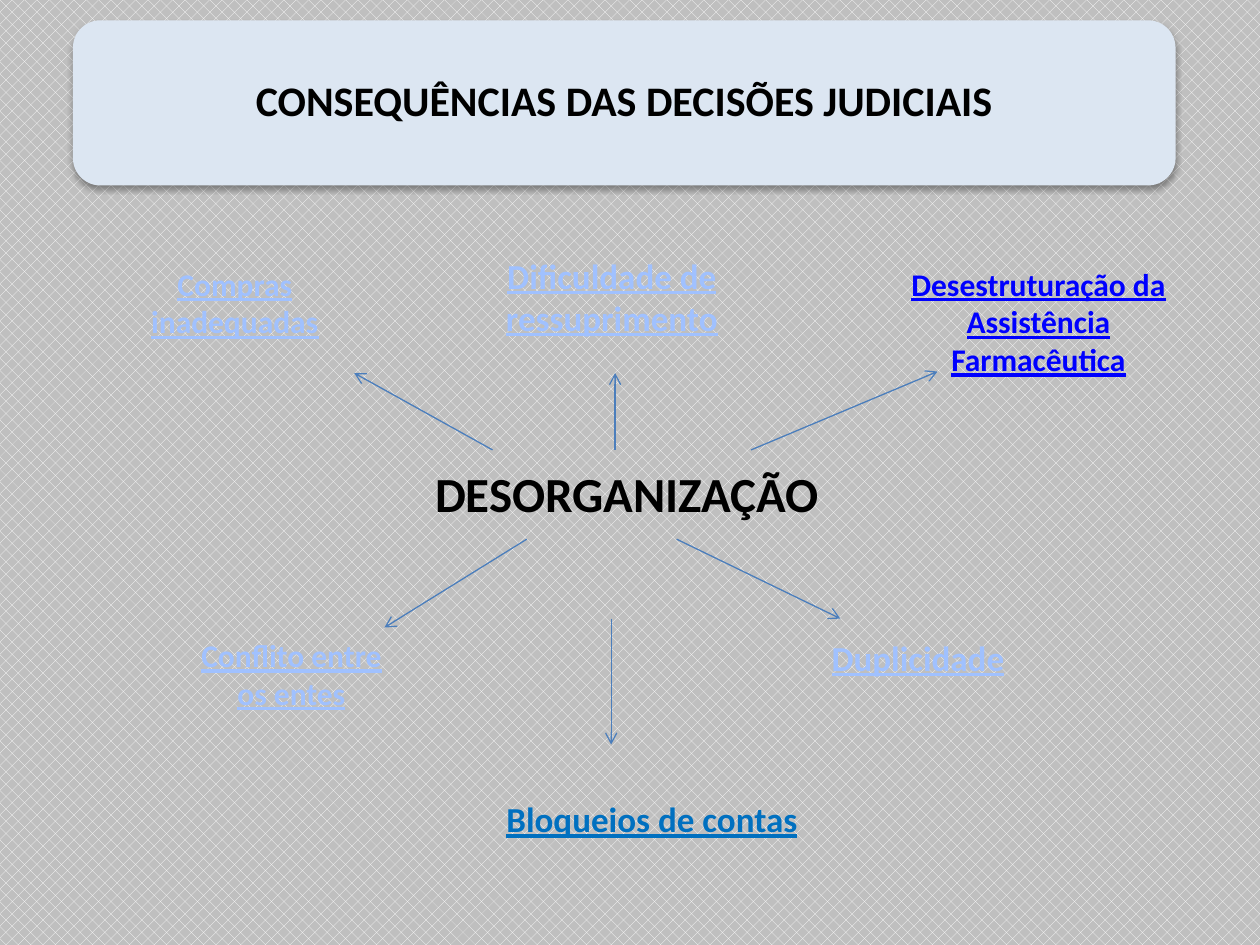
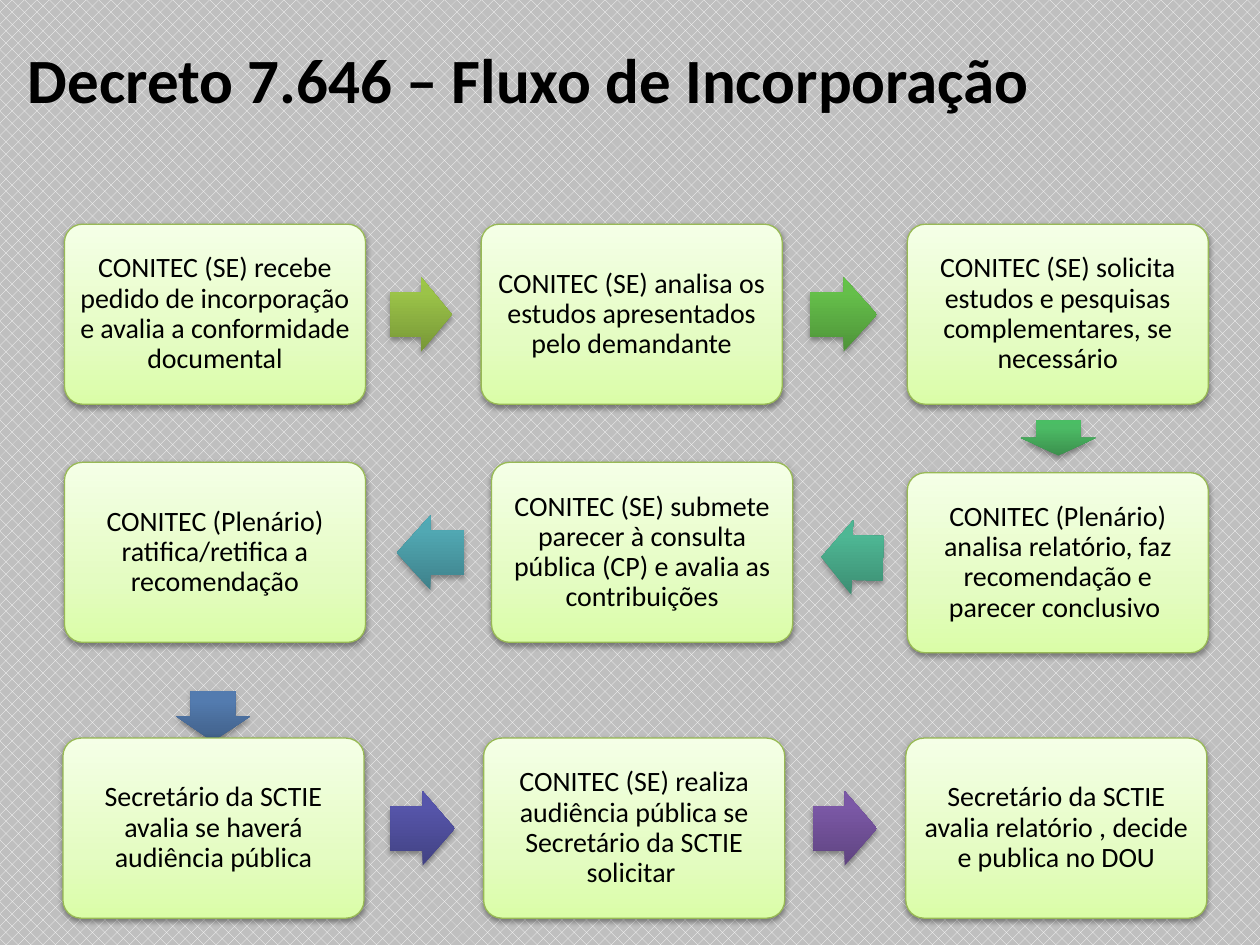
from dataclasses import dataclass

from lxml import etree
from pptx import Presentation
from pptx import util as u
from pptx.dml.color import RGBColor
from pptx.enum import dml, shapes, text
from pptx.oxml.ns import qn


@dataclass(frozen=True)
class Theme:
    font: str = "Calibri"
    ink: str = "000000"
    backdrop: str = "BFBFBF"
    hatch: str = "FFFFFF"
    banner: str = "DCE6F2"
    arrow: str = "4B7EBC"
    card_line: str = "98B955"
    strong_blue: str = "0000FF"
    account_blue: str = "0070C0"
    label_outline: tuple = ("467AB8", 0.83, 100)
    glow_outline: tuple = ("1E7CEE", 0.07, 55)
    card_stops: tuple = ((0, "DAFDA7"), (35, "E4FCC2"), (100, "F5FFE7"))
    label_stops: tuple = ((0, "BFD3F9"), (9, "A0C1FF"), (50, "003D85"),
                          (79, "A0C1FF"), (100, "BFD3F9"))
    heading: int = 36
    hub: int = 28
    banner_size: int = 24
    label_large: int = 20
    label_small: int = 18
    card: int = 16


THEME = Theme()
CARD_WIDTH, CARD_HEIGHT = 6.07, 3.63
ARROW_HEIGHT = 1.5


# XML helpers
def add_node(parent, tag, **attributes):
    node = etree.SubElement(parent, qn(tag))
    for name, value in attributes.items():
        node.set(name, str(value))
    return node


def add_colour(parent, colour, alpha=100):
    node = add_node(parent, "a:srgbClr", val=colour)
    if alpha < 100:
        add_node(node, "a:alpha", val=alpha * 1000)


def set_gradient(fill, owner, stops, angle):
    fill.gradient()
    fill.gradient_angle = angle
    gradient = owner.find(qn("a:gradFill"))
    gradient.set("rotWithShape", "0")
    stop_list = gradient.find(qn("a:gsLst"))
    for stop in list(stop_list):
        stop_list.remove(stop)
    for position, colour in stops:
        add_colour(add_node(stop_list, "a:gs", pos=position * 1000), colour)


def set_outline(span, colour, width, alpha):
    properties = span.font._element
    line = add_node(properties, "a:ln", w=u.Pt(width))
    add_colour(add_node(line, "a:solidFill"), colour, alpha)
    properties.insert(0, line)


def set_shadow(shape, alpha=35, distance=1.8):
    shape.shadow.inherit = False
    effects = shape._element.spPr.find(qn("a:effectLst"))
    shadow = add_node(effects, "a:outerShdw", blurRad=u.Pt(3.1),
                      dist=u.Pt(distance), dir=90 * 60000, rotWithShape=0)
    add_colour(shadow, "000000", alpha)


# Elements
def add_page(deck):
    page = deck.slides.add_slide(deck.slide_layouts[6])
    fill = page.background.fill
    fill.patterned()
    fill.pattern = dml.MSO_PATTERN.PERCENT_30
    fill.fore_color.rgb = RGBColor.from_string(THEME.hatch)
    fill.back_color.rgb = RGBColor.from_string(THEME.backdrop)
    return page


def write(box, words, size, bold=False, colour=THEME.ink,
          align=text.PP_ALIGN.CENTER, spacing=None):
    box.text_frame.word_wrap = True
    para = box.text_frame.paragraphs[0]
    para.alignment = align
    para.line_spacing = spacing
    span = para.add_run()
    span.text = words
    span.font.name = THEME.font
    span.font.size = u.Pt(size)
    span.font.bold = bold
    span.font.color.rgb = RGBColor.from_string(colour)
    return span


def add_text(page, left, top, width, height, words, size, **style):
    box = page.shapes.add_textbox(u.Cm(left), u.Cm(top), u.Cm(width), u.Cm(height))
    return box, write(box, words, size, bold=True, **style)


def add_label(page, left, top, width, height, words, size, colour=None):
    """Underlined label; without a colour it takes the blue gradient."""
    box, span = add_text(page, left, top, width, height, words, size,
                         colour=colour or THEME.ink)
    span.font.underline = True
    if colour is None:
        set_gradient(span.font.fill, span.font._element, THEME.label_stops, 270)
        set_outline(span, *THEME.label_outline)
    return box, span


def add_arrow_line(page, start, end):
    line = page.shapes.add_connector(
        shapes.MSO_CONNECTOR.STRAIGHT, *(u.Cm(value) for value in start + end))
    line.line.color.rgb = RGBColor.from_string(THEME.arrow)
    line.line.width = u.Pt(0.75)
    add_node(line.line._get_or_add_ln(), "a:tailEnd", type="arrow")
    add_node(line._element.spPr, "a:effectLst")


def add_panel(page, kind, left, top, width, height):
    panel = page.shapes.add_shape(kind, u.Cm(left), u.Cm(top), u.Cm(width), u.Cm(height))
    panel.line.fill.background()
    return panel


def set_margins(box, margin):
    frame = box.text_frame
    frame.vertical_anchor = text.MSO_ANCHOR.MIDDLE
    frame.margin_left = frame.margin_right = u.Cm(margin)
    frame.margin_top = frame.margin_bottom = u.Cm(margin)


def add_banner(page, words):
    banner = add_panel(page, shapes.MSO_SHAPE.ROUNDED_RECTANGLE, 1.47, 0.41, 22.23, 3.33)
    banner.fill.solid()
    banner.fill.fore_color.rgb = RGBColor.from_string(THEME.banner)
    set_shadow(banner)
    set_margins(banner, 0.25)
    write(banner, words, THEME.banner_size, bold=True, spacing=0.9)


def add_card(page, left, top, words):
    card = add_panel(page, shapes.MSO_SHAPE.ROUNDED_RECTANGLE,
                     left, top, CARD_WIDTH, CARD_HEIGHT)
    card.adjustments[0] = 0.1
    set_gradient(card.fill, card._element.spPr, THEME.card_stops, 90)
    card.line.color.rgb = RGBColor.from_string(THEME.card_line)
    card.line.width = u.Pt(0.75)
    set_shadow(card, alpha=38, distance=1.6)
    set_margins(card, 0.18)
    write(card, words, THEME.card, spacing=0.9)


def add_step_arrow(page, left, top, width, turn, colours):
    arrow = add_panel(page, shapes.MSO_SHAPE.RIGHT_ARROW, left, top, width, ARROW_HEIGHT)
    arrow.adjustments[0] = 0.6
    arrow.rotation = turn
    set_gradient(arrow.fill, arrow._element.spPr, tuple(zip((0, 80, 100), colours)), 90)
    set_shadow(arrow)


# Slides
def build_consequences(deck):
    page = add_page(deck)
    add_banner(page, "CONSEQUÊNCIAS DAS DECISÕES JUDICIAIS")

    # Hub and its arrows
    box, hub = add_text(page, 4.93, 9.22, 15.42, 1.45, "DESORGANIZAÇÃO", THEME.hub)
    set_outline(hub, *THEME.glow_outline)
    for start, end in (
        ((12.4, 9.07), (12.4, 7.52)),
        ((9.93, 9.07), (7.14, 7.52)),
        ((15.14, 9.07), (18.9, 7.49)),
        ((10.62, 10.87), (7.75, 12.65)),
        ((13.64, 10.87), (16.94, 12.47)),
        ((12.32, 12.47), (12.32, 15.01)),
    ):
        add_arrow_line(page, start, end)

    # Consequences around the hub
    large, small = THEME.label_large, THEME.label_small
    for left, top, height, words, size in (
        (9.91, 5.0, 1.96, "Dificuldade de ressuprimento", large),
        (2.31, 5.21, 1.8, "Compras inadequadas", small),
        (3.45, 12.7, 1.8, "Conflito entre os entes", small),
        (16.08, 12.7, 1.12, "Duplicidade", large),
    ):
        add_label(page, left, top, 4.85, height, words, size)
    box, span = add_label(page, 17.91, 5.21, 6.05, 2.57,
                          "Desestruturação da Assistência Farmacêutica",
                          small, THEME.strong_blue)
    set_outline(span, *THEME.glow_outline)
    box, span = add_label(page, 9.96, 15.95, 6.43, 1.12, "Bloqueios de contas",
                          large, THEME.account_blue)
    box.text_frame.word_wrap = False
    box.text_frame.paragraphs[0].alignment = text.PP_ALIGN.LEFT


def build_flow(deck):
    page = add_page(deck)
    title, span = add_text(page, 0, 0.53, 24.51, 2.11,
                           "Decreto 7.646 – Fluxo de Incorporação", THEME.heading,
                           align=text.PP_ALIGN.JUSTIFY)
    title.text_frame.vertical_anchor = text.MSO_ANCHOR.MIDDLE
    title.text_frame.margin_left = u.Cm(0.56)

    # Arrows between steps: left, top, width, turn, colours from foot to head
    for arrow in (
        (7.87, 5.59, 1.24, 0, ("779737", "9BC348", "9DC746")),
        (16.33, 5.59, 1.35, 0, ("4E9339", "65BF4A", "64C348")),
        (20.98, 8.08, 0.71, 90, ("3B904D", "4CBB65", "4ABE64")),
        (16.56, 10.49, 1.24, 181.4, ("3C8D72", "4EB794", "4DBA96")),
        (8.0, 10.39, 1.35, 180, ("3E818A", "51A8B3", "4FAAB6")),
        (3.78, 13.69, 1.02, 90.4, ("405F87", "537BAF", "527CB1")),
        (7.87, 15.95, 1.3, 0, ("424283", "5655AA", "5554AD")),
        (16.38, 15.95, 1.3, 0, ("5F4480", "7B58A6", "7C57A8")),
    ):
        add_step_arrow(page, *arrow)

    # Steps in reading order of the flow
    for left, top, words in (
        (1.3, 4.52, "CONITEC (SE) recebe pedido de incorporação e avalia "
                    "a conformidade documental"),
        (9.7, 4.52, "CONITEC (SE) analisa os estudos apresentados pelo demandante"),
        (18.29, 4.52, "CONITEC (SE) solicita estudos e pesquisas complementares, "
                      "se necessário"),
        (18.29, 9.53, "CONITEC (Plenário) analisa relatório, faz recomendação "
                      "e parecer conclusivo "),
        (9.91, 9.32, "CONITEC (SE) submete parecer à consulta pública (CP) "
                     "e avalia as contribuições"),
        (1.3, 9.32, "CONITEC (Plenário) ratifica/retifica a recomendação"),
        (1.27, 14.88, "Secretário da SCTIE avalia se haverá audiência pública"),
        (9.75, 14.88, "CONITEC (SE) realiza audiência pública se "
                      "Secretário da SCTIE solicitar "),
        (18.26, 14.88, "Secretário da SCTIE avalia relatório , decide "
                       "e publica no DOU"),
    ):
        add_card(page, left, top, words)


def main():
    deck = Presentation()
    deck.slide_width, deck.slide_height = u.Cm(25.4), u.Cm(19.05)
    build_consequences(deck)
    build_flow(deck)
    deck.save("out.pptx")


if __name__ == "__main__":
    main()
